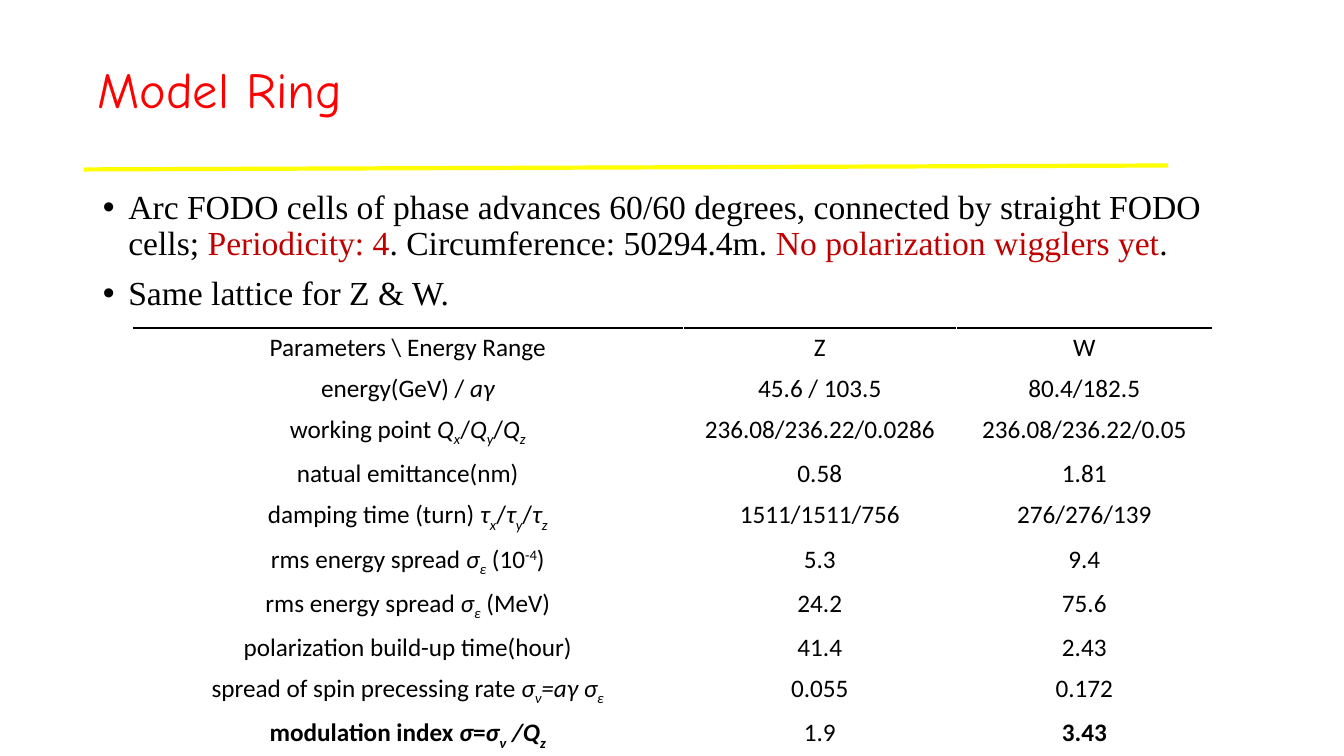
from dataclasses import dataclass

from lxml.etree import SubElement
from pptx import Presentation
from pptx.dml.color import RGBColor
from pptx.enum.shapes import MSO_CONNECTOR
from pptx.enum.text import MSO_ANCHOR, MSO_AUTO_SIZE, PP_ALIGN
from pptx.oxml import parse_xml
from pptx.oxml.ns import nsdecls, qn
from pptx.shapes.base import BaseShape
from pptx.slide import Slide
from pptx.table import _Cell as Cell
from pptx.text.text import _Paragraph as Para
from pptx.util import Cm, Pt

HUES = {
    "black": "000000",
    "white": "FFFFFF",
    "red": "FF0000",
    "dark red": "C00000",
    "yellow": "FFFF00",
}
SUB = -25
SUPER = 30


@dataclass(frozen=True)
class Bit:
    text: str
    slant: bool = False
    base: int = 0
    hue: str = "black"


@dataclass(frozen=True)
class Look:
    font: str
    size: int


@dataclass(frozen=True)
class Row:
    label: list[Bit]
    z: str
    w: str
    bold: tuple[bool, bool, bool] = (False, False, False)


HEAD = Look("Comic Neue", 36)
BODY = Look("Times New Roman", 24)
GRID = Look("Calibri", 18)


def color(hue: str) -> RGBColor:
    return RGBColor.from_string(HUES[hue])


def index(name: str, low: str) -> list[Bit]:
    return [Bit(name, True), Bit(low, True, SUB)]


def axes(name: str) -> list[Bit]:
    slash = [Bit("/")]
    return index(name, "x") + slash + index(name, "y") + slash + index(name, "z")


POINTS = [
    [
        Bit("Arc FODO cells of phase advances 60/60 degrees, connected by straight FODO cells; "),
        Bit("Periodicity: 4", hue="dark red"),
        Bit(". Circumference: 50294.4m. "),
        Bit("No polarization wigglers yet", hue="dark red"),
        Bit("."),
    ],
    [Bit("Same lattice for Z & W.")],
]
SPREAD = [Bit("rms energy spread "), *index("σ", "ε")]
ROWS = [
    Row([Bit("Parameters \\ Energy Range")], "Z", "W"),
    Row([Bit("energy(GeV) / "), Bit("aγ", True)], "45.6 / 103.5", "80.4/182.5"),
    Row([Bit("working point "), *axes("Q")], "236.08/236.22/0.0286", "236.08/236.22/0.05"),
    Row([Bit("natual emittance(nm)")], "0.58", "1.81"),
    Row([Bit("damping time (turn) "), *axes("τ")], "1511/1511/756", "276/276/139"),
    Row([*SPREAD, Bit(" (10"), Bit("-4", base=SUPER), Bit(")")], "5.3", "9.4"),
    Row([*SPREAD, Bit(" (MeV)")], "24.2", "75.6"),
    Row([Bit("polarization build-up time(hour)")], "41.4", "2.43"),
    Row(
        [Bit("spread of spin precessing rate "), *index("σ", "ν"), *index("=aγ σ", "ε")],
        "0.055",
        "0.172",
    ),
    Row(
        [Bit("modulation index "), Bit("σ", True), Bit("="), *index("σ", "ν"), *index(" /Q", "z")],
        "1.9",
        "3.43",
        (True, False, True),
    ),
]
WIDTHS = [13.89, 6.88, 6.45]


def write(para: Para, bits: list[Bit], look: Look, bold: bool = False) -> None:
    para.text = bits[0].text
    for bit in bits[1:]:
        para.add_run().text = bit.text
    for run, bit in zip(para.runs, bits):
        font = run.font
        font.name, font.size = look.font, Pt(look.size)
        font.bold, font.italic = bold, bit.slant
        font.color.rgb = color(bit.hue)
        if bit.base:
            run._r.get_or_add_rPr().set("baseline", str(bit.base * 1000))


def place(shape: BaseShape, left: float, top: float, width: float, height: float) -> None:
    shape.left, shape.top = Cm(left), Cm(top)
    shape.width, shape.height = Cm(width), Cm(height)


def add_title(slide: Slide) -> None:
    title = slide.shapes.title
    place(title, 2.2, 0.48, 26.54, 3.68)
    frame = title.text_frame
    frame.auto_size = MSO_AUTO_SIZE.NONE
    frame.vertical_anchor = MSO_ANCHOR.MIDDLE
    para = frame.paragraphs[0]
    write(para, [Bit("Model Ring", hue="red")], HEAD)
    para.alignment = PP_ALIGN.LEFT
    para.line_spacing = 0.9


def add_rule(slide: Slide) -> None:
    rule = slide.shapes.add_connector(
        MSO_CONNECTOR.STRAIGHT, Cm(2.11), Cm(4.27), Cm(29.44), Cm(4.17)
    )
    rule.line.color.rgb = color("yellow")
    rule.line.width = Pt(3)
    SubElement(rule._element.spPr, qn("a:effectLst"))


def add_points(slide: Slide) -> None:
    body = slide.placeholders[1]
    place(body, 2.34, 4.67, 29.21, 12.09)
    frame = body.text_frame
    frame.auto_size = MSO_AUTO_SIZE.NONE
    frame.word_wrap = True
    for spot, bits in enumerate(POINTS):
        para = frame.add_paragraph() if spot else frame.paragraphs[0]
        props = para._p.get_or_add_pPr()
        props.set("marL", str(Cm(0.64)))
        props.set("indent", str(-Cm(0.64)))
        SubElement(props, qn("a:buFont")).set("typeface", "Arial")
        SubElement(props, qn("a:buChar")).set("char", "•")
        write(para, bits, BODY)
        para.line_spacing = 0.9
        para.space_before = Pt(10 if spot else 0)


def add_edge(cell: Cell, side: str) -> None:
    edge = parse_xml(
        f'<a:{side} {nsdecls("a")} w="{Pt(2)}"><a:solidFill>'
        f'<a:srgbClr val="{HUES["black"]}"/></a:solidFill></a:{side}>'
    )
    cell._tc.get_or_add_tcPr().insert(0, edge)


def add_grid(slide: Slide) -> None:
    grid = slide.shapes.add_table(
        len(ROWS), len(WIDTHS), Cm(3.33), Cm(8.26), Cm(sum(WIDTHS)), Cm(10.29)
    ).table
    grid.first_row = grid.horz_banding = False
    for col, width in zip(grid.columns, WIDTHS):
        col.width = Cm(width)
    for line, row in enumerate(ROWS):
        grid.rows[line].height = Cm(1.03 if line else 0.94)
        for col, bits in enumerate([row.label, [Bit(row.z)], [Bit(row.w)]]):
            cell = grid.cell(line, col)
            cell.fill.solid()
            cell.fill.fore_color.rgb = color("white")
            para = cell.text_frame.paragraphs[0]
            write(para, bits, GRID, row.bold[col])
            para.alignment = PP_ALIGN.CENTER
            if line == 0:
                add_edge(cell, "lnT")
            if line == len(ROWS) - 1:
                add_edge(cell, "lnB")


def main() -> None:
    deck = Presentation()
    deck.slide_width, deck.slide_height = Cm(33.87), Cm(19.05)
    slide = deck.slides.add_slide(deck.slide_layouts[1])
    add_rule(slide)
    add_title(slide)
    add_points(slide)
    add_grid(slide)
    deck.save("out.pptx")


if __name__ == "__main__":
    main()
